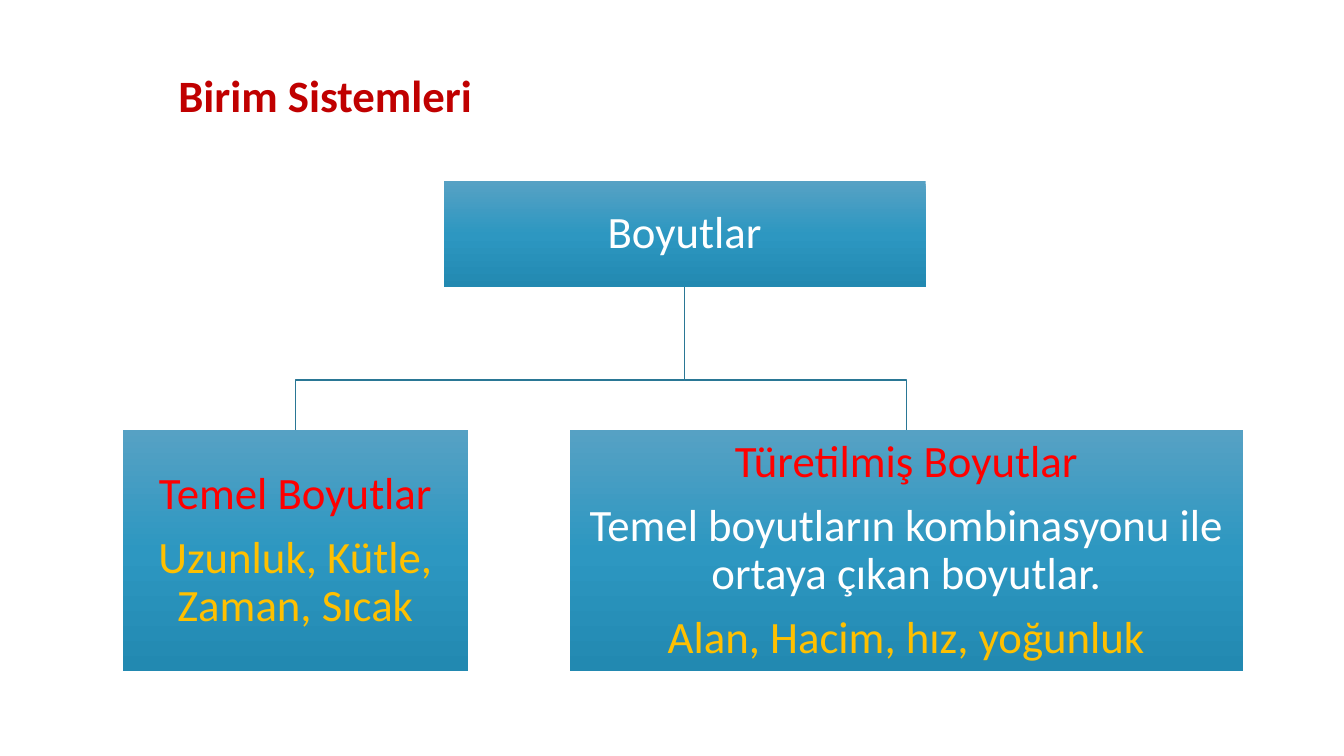
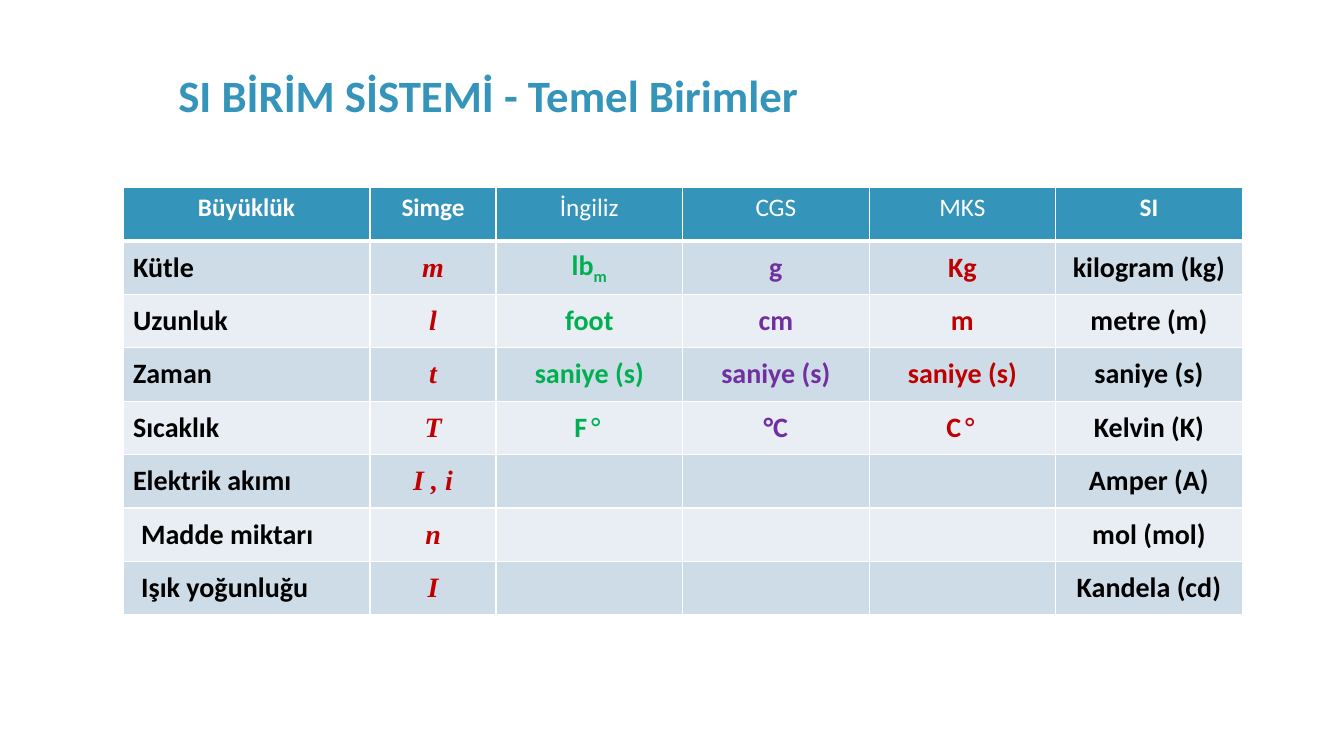
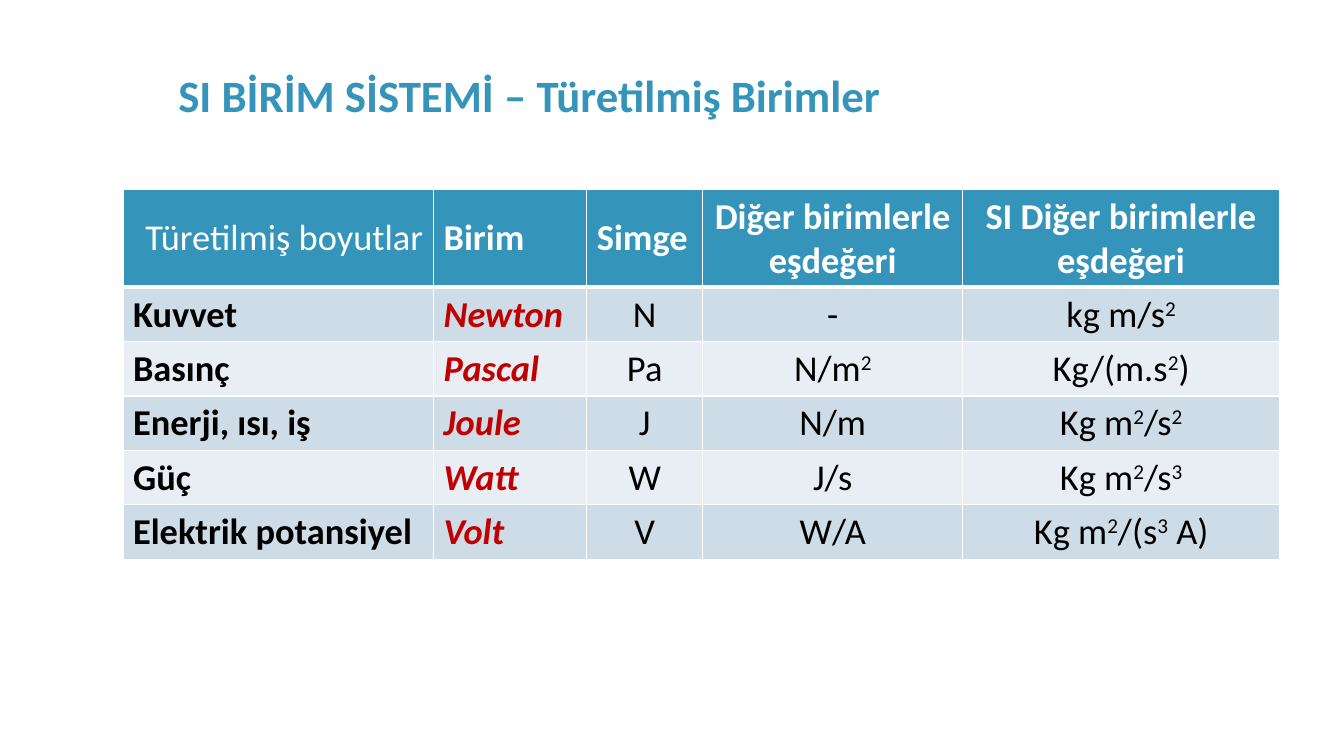
"""Build three slides on dimensions and the SI unit system."""
import copy
import itertools
from dataclasses import dataclass

import pptx
import pptx.dml.color
import pptx.enum.shapes
import pptx.enum.text
import pptx.oxml
import pptx.oxml.ns
import pptx.util

Inches = pptx.util.Inches
Pt = pptx.util.Pt
qn = pptx.oxml.ns.qn
ALIGN = pptx.enum.text.PP_ALIGN
ANCHOR = pptx.enum.text.MSO_ANCHOR

FONT = "Calibri"
SYMBOL_FONT = "Times New Roman"
TEAL, DARK_TEAL, WHITE, BLACK = "3494BA", "2A7795", "FFFFFF", "000000"
CRIMSON, RED, GOLD, GREEN, PURPLE = "C00000", "FF0000", "FFC000", "00B050", "7030A0"
BANDS = ("CEDCE7", "E8EEF3")
BOX_GRADIENT = ((0, "56A1C4"), (0.5, "2D97C1"), (1, "2289B1"))
BASELINES = {"^": "30000", "_": "-25000"}
LEFT = 1.22


@dataclass(frozen=True)
class Style:
    size: float
    color: str = BLACK
    bold: bool = False
    italic: bool = False
    font: str = FONT


@dataclass(frozen=True)
class Box:
    left: float
    top: float
    width: float
    height: float
    lines: tuple[tuple[str, str], ...]

    @property
    def center(self) -> float:
        return self.left + self.width / 2


@dataclass(frozen=True)
class Column:
    width: float
    header: str
    header_bold: bool
    header_align: ALIGN
    align: ALIGN
    style: Style


@dataclass(frozen=True)
class Table:
    top: float
    header_height: float
    row_height: float
    header_size: float
    header_anchor: ANCHOR
    columns: tuple[Column, ...]
    rows: tuple[tuple[str, ...], ...]
    rtl_cells: tuple[tuple[int, int], ...] = ()
    indented_cells: tuple[tuple[int, int], ...] = ()


BOXES = (
    Box(4.4, 1.8, 4.78, 1.05, (("Boyutlar", WHITE),)),
    Box(LEFT, 4.27, 3.42, 2.39, (
        ("Temel Boyutlar", RED),
        ("Uzunluk, Kütle, Zaman, Sıcak", GOLD),
    )),
    Box(5.65, 4.27, 6.68, 2.39, (
        ("Türetilmiş Boyutlar", RED),
        ("Temel boyutların kombinasyonu ile ortaya çıkan boyutlar.", WHITE),
        ("Alan, Hacim, hız, yoğunluk", GOLD),
    )),
)

BASE_UNITS = Table(
    1.86, 0.53, 0.53, 18, ANCHOR.TOP,
    (
        Column(2.45, "Büyüklük", True, ALIGN.CENTER, ALIGN.LEFT, Style(20, bold=True)),
        Column(1.25, "Simge", True, ALIGN.CENTER, ALIGN.CENTER,
               Style(20, CRIMSON, True, True, SYMBOL_FONT)),
        Column(1.85, "İngiliz", False, ALIGN.CENTER, ALIGN.CENTER, Style(20, GREEN, True)),
        Column(1.85, "CGS", False, ALIGN.CENTER, ALIGN.CENTER, Style(20, PURPLE, True)),
        Column(1.85, "MKS", False, ALIGN.CENTER, ALIGN.CENTER, Style(20, CRIMSON, True)),
        Column(1.85, "SI", True, ALIGN.CENTER, ALIGN.CENTER, Style(20, bold=True)),
    ),
    (
        ("Kütle", "m", "lb_m", "g", "Kg", "kilogram (kg)"),
        ("Uzunluk", "l", "foot", "cm", "m", "metre (m)"),
        ("Zaman", "t", "saniye (s)", "saniye (s)", "saniye (s)", "saniye (s)"),
        ("Sıcaklık", "T", "°F", "°C", "°C", "Kelvin (K)"),
        ("Elektrik akımı", "I , i", "", "", "", "Amper (A)"),
        ("Madde miktarı", "n", "", "", "", "mol (mol)"),
        ("Işık yoğunluğu", "I", "", "", "", "Kandela (cd)"),
    ),
    rtl_cells=((4, 2), (4, 4)),
    indented_cells=((6, 0), (7, 0)),
)

DERIVED_UNITS = Table(
    1.88, 0.97, 0.54, 26, ANCHOR.MIDDLE,
    (
        Column(3.08, "Türetilmiş boyutlar", False, ALIGN.RIGHT, ALIGN.LEFT,
               Style(26, bold=True)),
        Column(1.52, "Birim", True, ALIGN.LEFT, ALIGN.LEFT, Style(26, CRIMSON, True, True)),
        Column(1.15, "Simge", True, ALIGN.LEFT, ALIGN.CENTER, Style(26)),
        Column(2.58, "Diğer birimlerle eşdeğeri", True, ALIGN.CENTER, ALIGN.CENTER, Style(26)),
        Column(3.14, "SI Diğer birimlerle eşdeğeri", True, ALIGN.CENTER, ALIGN.CENTER,
               Style(26)),
    ),
    (
        ("Kuvvet", "Newton", "N", "-", "kg m/s^2"),
        ("Basınç", "Pascal", "Pa", "N/m^2", "Kg/(m.s^2)"),
        ("Enerji, ısı, iş", "Joule", "J", "N/m", "Kg m^2/s^2"),
        ("Güç", "Watt", "W", "J/s", "Kg m^2/s^3"),
        ("Elektrik potansiyel", "Volt", "V", "W/A", "Kg m^2/(s^3 A)"),
    ),
)


def rgb(color: str) -> pptx.dml.color.RGBColor:
    return pptx.dml.color.RGBColor.from_string(color)


def add_runs(p, text: str, style: Style) -> None:
    shifted, shift = [], None
    for char in text:
        if char in BASELINES:
            shift = BASELINES[char]
        else:
            shifted.append((shift, char))
            shift = None
    for baseline, group in itertools.groupby(shifted, key=lambda pair: pair[0]):
        r = p.add_run()
        r.text = "".join(char for _, char in group)
        r.font.name = style.font
        r.font.size = Pt(style.size)
        r.font.bold = style.bold
        r.font.italic = style.italic
        r.font.color.rgb = rgb(style.color)
        if baseline:
            r.font._element.set("baseline", baseline)


def add_slide(prs, title: str, color: str):
    s = prs.slides.add_slide(prs.slide_layouts[6])
    tf = s.shapes.add_textbox(Inches(1.67), Inches(0.17), Inches(8.71), Inches(1.08)).text_frame
    tf.word_wrap = True
    tf.vertical_anchor = ANCHOR.BOTTOM
    add_runs(tf.paragraphs[0], title, Style(32, color, True))
    return s


def add_box(s, box: Box) -> None:
    sp = s.shapes.add_shape(
        pptx.enum.shapes.MSO_SHAPE.RECTANGLE,
        Inches(box.left), Inches(box.top), Inches(box.width), Inches(box.height))
    sp.shadow.inherit = False
    sp.line.fill.background()
    sp.fill.gradient()
    sp.fill.gradient_angle = 270
    stops = sp._element.spPr.find(".//" + qn("a:gsLst"))
    stops.insert(1, copy.deepcopy(stops[0]))
    for stop, (position, color) in zip(sp.fill.gradient_stops, BOX_GRADIENT):
        stop.position = position
        stop.color.rgb = rgb(color)
    tf = sp.text_frame
    tf.word_wrap = True
    tf.vertical_anchor = ANCHOR.MIDDLE
    tf.margin_left = tf.margin_right = tf.margin_top = tf.margin_bottom = Inches(0.02)
    for i, (text, color) in enumerate(box.lines):
        p = tf.add_paragraph() if i else tf.paragraphs[0]
        p.alignment = ALIGN.CENTER
        p.line_spacing = 0.9
        p.space_after = Pt(11.2)
        add_runs(p, text, Style(32, color))


def add_branch(s, parent: Box, child: Box) -> None:
    bend = 3.77
    builder = s.shapes.build_freeform(
        Inches(parent.center), Inches(parent.top + parent.height))
    corners = ((parent.center, bend), (child.center, bend), (child.center, child.top))
    builder.add_line_segments([(Inches(x), Inches(y)) for x, y in corners], close=False)
    sp = builder.convert_to_shape()
    sp.shadow.inherit = False
    sp.fill.background()
    sp.line.color.rgb = rgb(DARK_TEAL)
    sp.line.width = Pt(1)


def set_borders(cell, bottom: float) -> None:
    tc_pr = cell._tc.get_or_add_tcPr()
    for i, (side, width) in enumerate((("L", 1), ("R", 1), ("T", 1), ("B", bottom))):
        tc_pr.insert(i, pptx.oxml.parse_xml(
            f'<a:ln{side} {pptx.oxml.ns.nsdecls("a")} w="{Pt(width)}"><a:solidFill>'
            f'<a:srgbClr val="{WHITE}"/></a:solidFill></a:ln{side}>'))


def fill_cell(cell, text: str, style: Style, align: ALIGN, anchor: ANCHOR,
              fill: str, bottom: float) -> None:
    cell.fill.solid()
    cell.fill.fore_color.rgb = rgb(fill)
    cell.vertical_anchor = anchor
    set_borders(cell, bottom)
    p = cell.text_frame.paragraphs[0]
    p.alignment = align
    add_runs(p, text, style)


def add_units_table(s, table: Table) -> None:
    rows, columns = len(table.rows) + 1, table.columns
    width = sum(column.width for column in columns)
    height = table.header_height + table.row_height * len(table.rows)
    grid = s.shapes.add_table(
        rows, len(columns), Inches(LEFT), Inches(table.top), Inches(width), Inches(height)).table
    grid.horz_banding = False
    for i, row in enumerate(grid.rows):
        row.height = Inches(table.row_height if i else table.header_height)
    for j, column in enumerate(columns):
        grid.columns[j].width = Inches(column.width)
        fill_cell(grid.cell(0, j), column.header,
                  Style(table.header_size, WHITE, column.header_bold),
                  column.header_align, table.header_anchor, TEAL, 3)
        for i, texts in enumerate(table.rows, start=1):
            fill_cell(grid.cell(i, j), texts[j], column.style, column.align,
                      ANCHOR.MIDDLE, BANDS[(i - 1) % 2], 1)
    for i, j in table.rtl_cells:
        grid.cell(i, j).text_frame.paragraphs[0]._p.get_or_add_pPr().set("rtl", "1")
    for i, j in table.indented_cells:
        grid.cell(i, j).margin_left = Inches(0.18)


def main() -> None:
    prs = pptx.Presentation()
    prs.slide_width = Inches(13.33)
    prs.slide_height = Inches(7.5)

    s = add_slide(prs, "Birim Sistemleri", CRIMSON)
    root, *children = BOXES
    for child in children:
        add_branch(s, root, child)
    for box in BOXES:
        add_box(s, box)

    add_units_table(add_slide(prs, "SI BİRİM SİSTEMİ - Temel Birimler", TEAL), BASE_UNITS)
    add_units_table(add_slide(prs, "SI BİRİM SİSTEMİ – Türetilmiş Birimler", TEAL), DERIVED_UNITS)
    prs.save("out.pptx")


if __name__ == "__main__":
    main()
